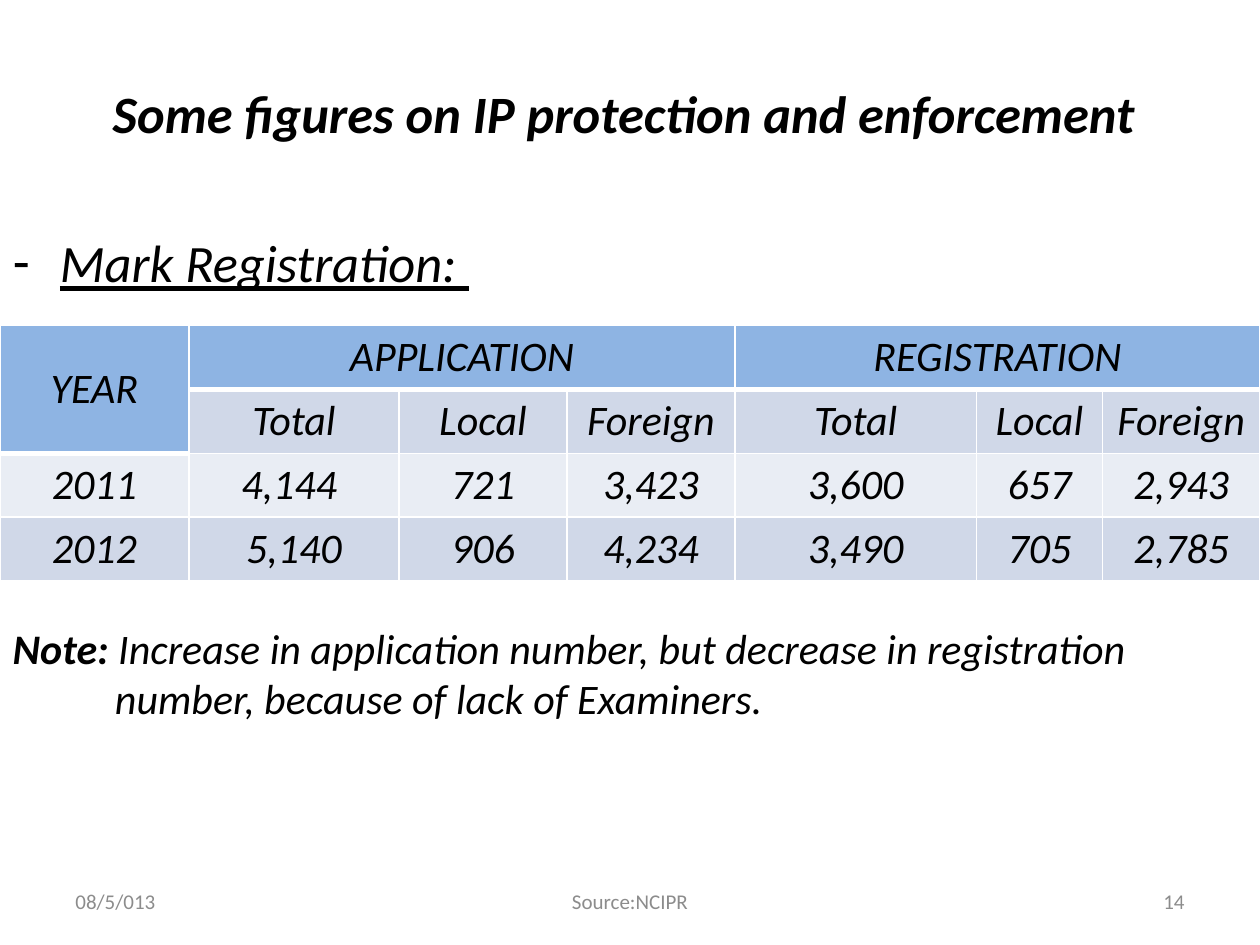
from lxml.etree import SubElement
from pptx import Presentation
from pptx.dml.color import RGBColor
from pptx.enum.text import MSO_ANCHOR, MSO_AUTO_SIZE, PP_ALIGN
from pptx.oxml.ns import qn
from pptx.util import Pt

BLACK = RGBColor(0x00, 0x00, 0x00)
WHITE = RGBColor(0xFF, 0xFF, 0xFF)
GRAY = RGBColor(0x8C, 0x8C, 0x8C)
HEADER = RGBColor(0x8E, 0xB4, 0xE3)
BAND_DARK = RGBColor(0xD0, 0xD8, 0xE8)
BAND_LIGHT = RGBColor(0xE9, 0xED, 0xF4)
ROW_FILLS = [HEADER, BAND_DARK, BAND_LIGHT, BAND_DARK]
COLUMN_WIDTHS = [108, 120, 96, 96, 138, 72, 90]
MARK_ROWS = [
    ["YEAR", "APPLICATION", "", "", "REGISTRATION", "", ""],
    ["", "Total", "Local", "Foreign", "Total", "Local", "Foreign"],
    ["2011", "4,144 ", "721", "3,423", "3,600", "657", "2,943"],
    ["2012", "5,140", "906", "4,234", "3,490", "705", "2,785"],
]
MERGES = [(0, 0, 1, 0), (0, 1, 0, 3), (0, 4, 0, 6)]
FOOTERS = [
    ("08/5/013", 36, 168, PP_ALIGN.LEFT),
    ("Source:NCIPR", 246, 228, PP_ALIGN.CENTER),
    ("14", 516, 168, PP_ALIGN.RIGHT),
]


class SlideBuilder:
    """Holds the text style and the current slide, and adds its elements."""

    font = "Calibri"

    def __init__(self, prs):
        self.s = prs.slides.add_slide(prs.slide_layouts[1])

    def style(self, r, size, color=BLACK, bold=False, italic=True, underline=False):
        f = r.font
        f.name, f.size, f.color.rgb = self.font, Pt(size), color
        f.bold, f.italic, f.underline = bold, italic, underline

    def place(self, sp, left, top, width, height, anchor):
        sp.left, sp.top, sp.width, sp.height = map(Pt, (left, top, width, height))
        tf = sp.text_frame
        tf.word_wrap, tf.auto_size = True, MSO_AUTO_SIZE.NONE
        tf.vertical_anchor = anchor
        return tf

    def title(self, text, left, top, width, height):
        tf = self.place(self.s.shapes.title, left, top, width, height, MSO_ANCHOR.MIDDLE)
        tf.text = text
        p = tf.paragraphs[0]
        p.alignment = PP_ALIGN.CENTER
        self.style(p.runs[0], 30, bold=True)

    def body(self, left, top, width, height):
        return self.place(self.s.placeholders[1], left, top, width, height, MSO_ANCHOR.TOP)

    def item(self, p, parts, size, indent, before=0, bullet=None):
        for text, look in parts:
            r = p.add_run()
            r.text = text
            self.style(r, size, **look)
        p.space_before, p.space_after = Pt(before), Pt(0)
        pPr = p._p.get_or_add_pPr()
        pPr.set("marL", str(Pt(indent)))
        pPr.set("indent", str(-Pt(indent)))
        if bullet:
            SubElement(pPr, qn("a:buChar"), char=bullet)
        else:
            SubElement(pPr, qn("a:buNone"))

    def borders(self, cell, bottom):
        tcPr = cell._tc.get_or_add_tcPr()
        for i, (side, width) in enumerate(zip("LRTB", (1, 1, 1, bottom))):
            ln = SubElement(tcPr, qn(f"a:ln{side}"), w=str(Pt(width)))
            fill = SubElement(ln, qn("a:solidFill"))
            SubElement(fill, qn("a:srgbClr"), val=str(WHITE))
            tcPr.insert(i, ln)

    def table(self, rows, widths, fills, merges, left, top, row_height):
        table = self.s.shapes.add_table(
            len(rows), len(widths), Pt(left), Pt(top),
            Pt(sum(widths)), Pt(row_height * len(rows))).table
        table.first_row = table.horz_banding = False
        for column, width in zip(table.columns, widths):
            column.width = Pt(width)
        for i, row in enumerate(rows):
            for j, text in enumerate(row):
                cell = table.cell(i, j)
                cell.fill.solid()
                cell.fill.fore_color.rgb = fills[i]
                self.borders(cell, 3 if i == 0 else 1)
                p = cell.text_frame.paragraphs[0]
                p.alignment = PP_ALIGN.CENTER
                if text:
                    p.text = text
                    self.style(p.runs[0], 24)
        for r1, c1, r2, c2 in merges:
            table.cell(r1, c1).merge(table.cell(r2, c2))
        table.cell(0, 0).vertical_anchor = MSO_ANCHOR.MIDDLE

    def footer(self, text, left, top, width, height, align):
        sp = self.s.shapes.add_textbox(0, 0, 0, 0)
        tf = self.place(sp, left, top, width, height, MSO_ANCHOR.MIDDLE)
        tf.text = text
        p = tf.paragraphs[0]
        p.alignment = align
        self.style(p.runs[0], 12, GRAY, italic=False)


def main():
    prs = Presentation()
    prs.slide_width, prs.slide_height = Pt(720), Pt(540)
    b = SlideBuilder(prs)
    b.title("Some figures on IP protection and enforcement ", 0, 42, 720, 45)
    tf = b.body(0, 128, 720, 370)
    b.item(tf.paragraphs[0], [("Mark Registration: ", {"underline": True})],
           30, 27, bullet="-")
    b.item(tf.add_paragraph(), [
        ("Note: ", {"bold": True}),
        ("Increase in application number, but decrease in registration "
         "number, because of lack of Examiners.", {}),
    ], 24, 58.5, before=188)
    b.table(MARK_ROWS, COLUMN_WIDTHS, ROW_FILLS, MERGES, 0, 186, 36)
    for text, left, width, align in FOOTERS:
        b.footer(text, left, 500.5, width, 28.75, align)
    prs.save("out.pptx")


if __name__ == "__main__":
    main()
